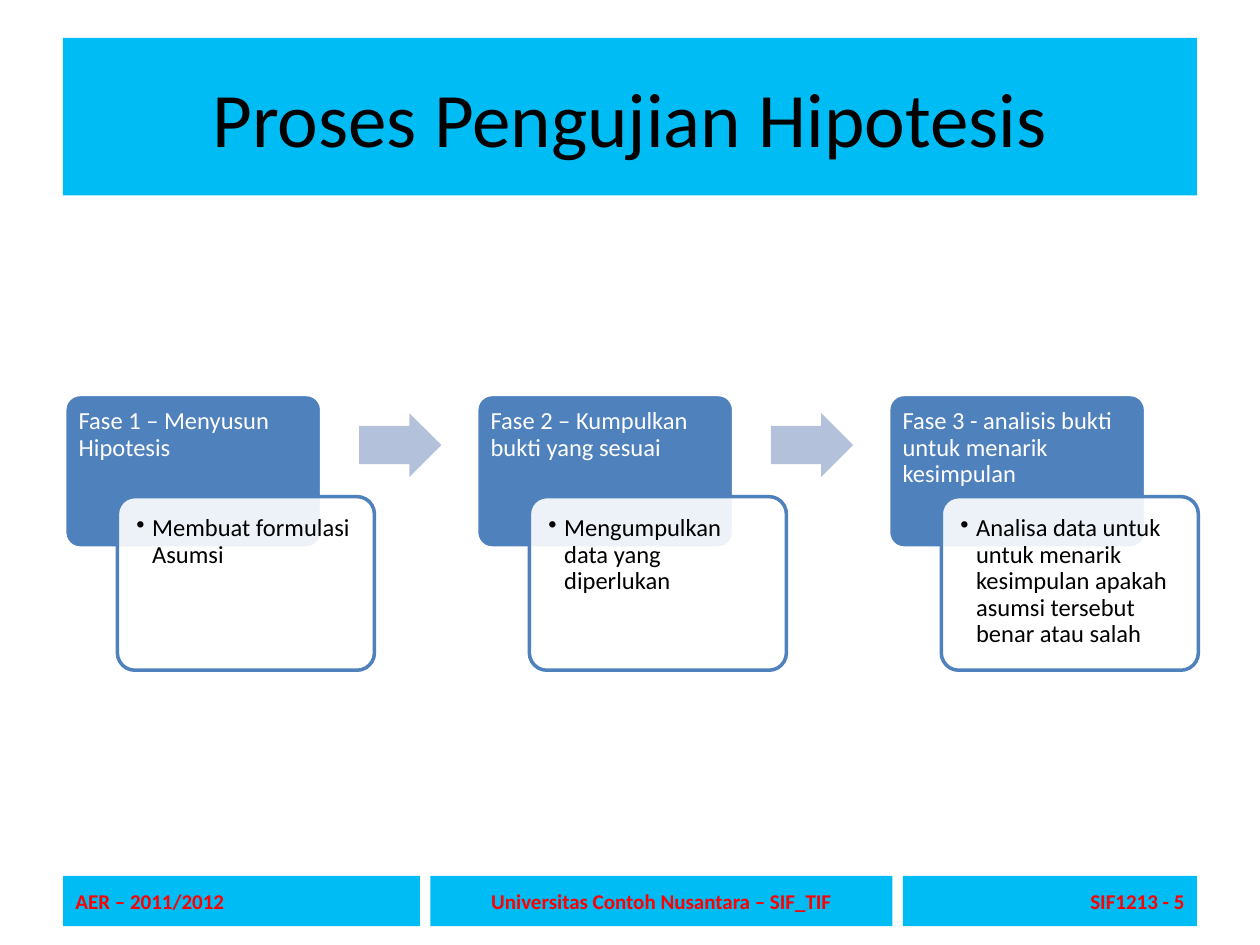
from dataclasses import dataclass

from lxml.etree import SubElement
from pptx import Presentation
from pptx.dml.color import RGBColor
from pptx.enum.shapes import MSO_SHAPE
from pptx.enum.text import MSO_ANCHOR, PP_ALIGN
from pptx.oxml.ns import qn
from pptx.util import Pt


@dataclass(frozen=True)
class Theme:
    font: str = "Calibri"
    band: RGBColor = RGBColor(0x00, 0xBC, 0xF4)
    phase: RGBColor = RGBColor(0x4F, 0x81, 0xBD)
    arrow: RGBColor = RGBColor(0xB3, 0xC1, 0xDB)
    white: RGBColor = RGBColor(0xFF, 0xFF, 0xFF)
    black: RGBColor = RGBColor(0x00, 0x00, 0x00)
    red: RGBColor = RGBColor(0xFF, 0x00, 0x00)
    title_size: int = 44
    body_size: int = 14
    footer_size: int = 12


THEME = Theme()
MARGIN = 36
PHASE_TOP = 225.4
PHASE_STEP = 235.4
CARD_WIDTH = 146.9
PHASES = [
    ("Fase 1 – Menyusun Hipotesis", "Membuat formulasi Asumsi"),
    ("Fase 2 – Kumpulkan bukti yang sesuai", "Mengumpulkan data yang diperlukan"),
    ("Fase 3 - analisis bukti untuk menarik kesimpulan",
     "Analisa data untuk untuk menarik kesimpulan apakah asumsi tersebut benar atau salah"),
]
FOOTERS = [
    (MARGIN, 204, "AER – 2011/2012", PP_ALIGN.LEFT),
    (246, 264, "Universitas Contoh Nusantara – SIF_TIF", PP_ALIGN.CENTER),
    (516, 168, "SIF1213 - 5", PP_ALIGN.RIGHT),
]


def add_box(page, kind, left, top, width, height, fill, line=None):
    box = page.shapes.add_shape(kind, Pt(left), Pt(top), Pt(width), Pt(height))
    box.shadow.inherit = False
    box.fill.solid()
    box.fill.fore_color.rgb = fill
    if line is None:
        box.line.fill.background()
    else:
        box.line.color.rgb = line
        box.line.width = Pt(2)
    return box


def write_text(box, text, size, color, align=PP_ALIGN.LEFT, bold=False):
    box.text_frame.word_wrap = True
    para = box.text_frame.paragraphs[0]
    para.alignment = align
    span = para.add_run()
    span.text = text
    span.font.name = THEME.font
    span.font.size = Pt(size)
    span.font.bold = bold
    span.font.color.rgb = color
    return para


def add_band(page, left, top, width, height, text, size, color, align, bold=False):
    band = add_box(page, MSO_SHAPE.RECTANGLE, left, top, width, height, THEME.band)
    band.text_frame.vertical_anchor = MSO_ANCHOR.MIDDLE
    write_text(band, text, size, color, align, bold)


def add_card(page, left, top, height, fill, line, text, color, inset):
    card = add_box(page, MSO_SHAPE.ROUNDED_RECTANGLE, left, top, CARD_WIDTH, height, fill, line)
    card.adjustments[0] = 0.1
    frame = card.text_frame
    frame.vertical_anchor = MSO_ANCHOR.TOP
    frame.margin_left = frame.margin_right = frame.margin_top = frame.margin_bottom = Pt(inset)
    para = write_text(card, text, THEME.body_size, color)
    para.line_spacing = 0.9
    return card, para


def set_opacity(box, percent):
    color = box.fill._xPr.find(qn("a:solidFill"))[0]
    SubElement(color, qn("a:alpha")).set("val", str(percent * 1000))


def set_bullet(para, indent):
    properties = para._p.get_or_add_pPr()
    properties.set("marL", str(Pt(indent)))
    properties.set("indent", str(-Pt(indent)))
    SubElement(properties, qn("a:buChar")).set("char", "•")


def add_phase(page, left, heading, detail):
    add_card(page, left, PHASE_TOP, 87.8, THEME.phase, THEME.white, heading, THEME.white, 5.4)
    card, para = add_card(page, left + 30.1, PHASE_TOP + 58.4, 99.2, THEME.white, THEME.phase,
                          detail, THEME.black, 8)
    set_opacity(card, 90)
    set_bullet(para, 9)


def add_arrow(page, left):
    arrow = add_box(page, MSO_SHAPE.RIGHT_ARROW, left, PHASE_TOP + 10.6, 47, 36.6, THEME.arrow)
    arrow.adjustments[0] = 0.6
    arrow.adjustments[1] = 0.5


def main():
    deck = Presentation()
    deck.slide_width, deck.slide_height = Pt(720), Pt(540)
    page = deck.slides.add_slide(deck.slide_layouts[6])
    add_band(page, MARGIN, 21.6, 648, 90, "Proses Pengujian Hipotesis",
             THEME.title_size, THEME.black, PP_ALIGN.CENTER)
    for index, (heading, detail) in enumerate(PHASES):
        left = MARGIN + 1 + index * PHASE_STEP
        add_phase(page, left, heading, detail)
        if index < len(PHASES) - 1:
            add_arrow(page, left + 168.2)
    for left, width, text, align in FOOTERS:
        add_band(page, left, 500.5, width, 28.7, text,
                 THEME.footer_size, THEME.red, align, bold=True)
    deck.save("out.pptx")


if __name__ == "__main__":
    main()
